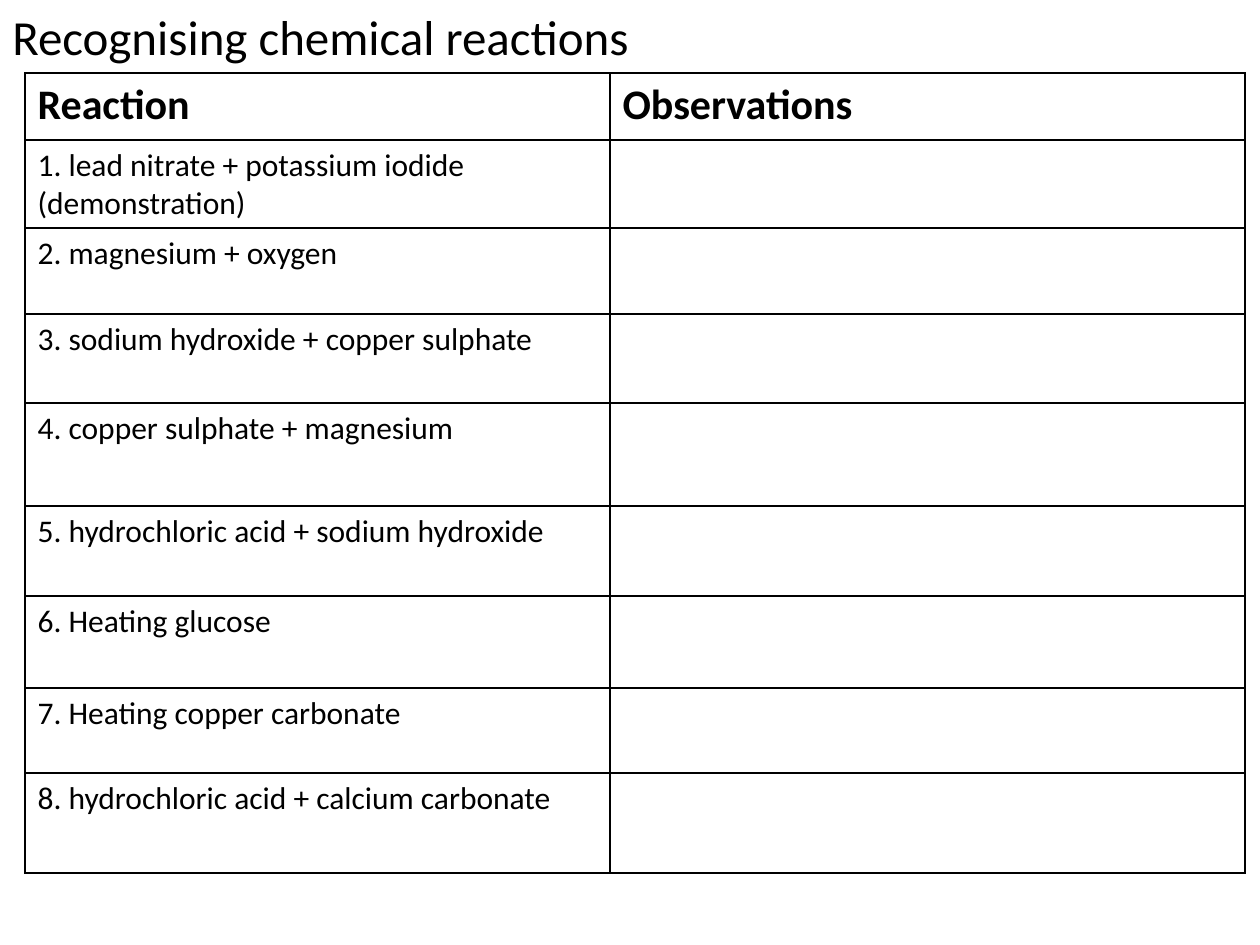
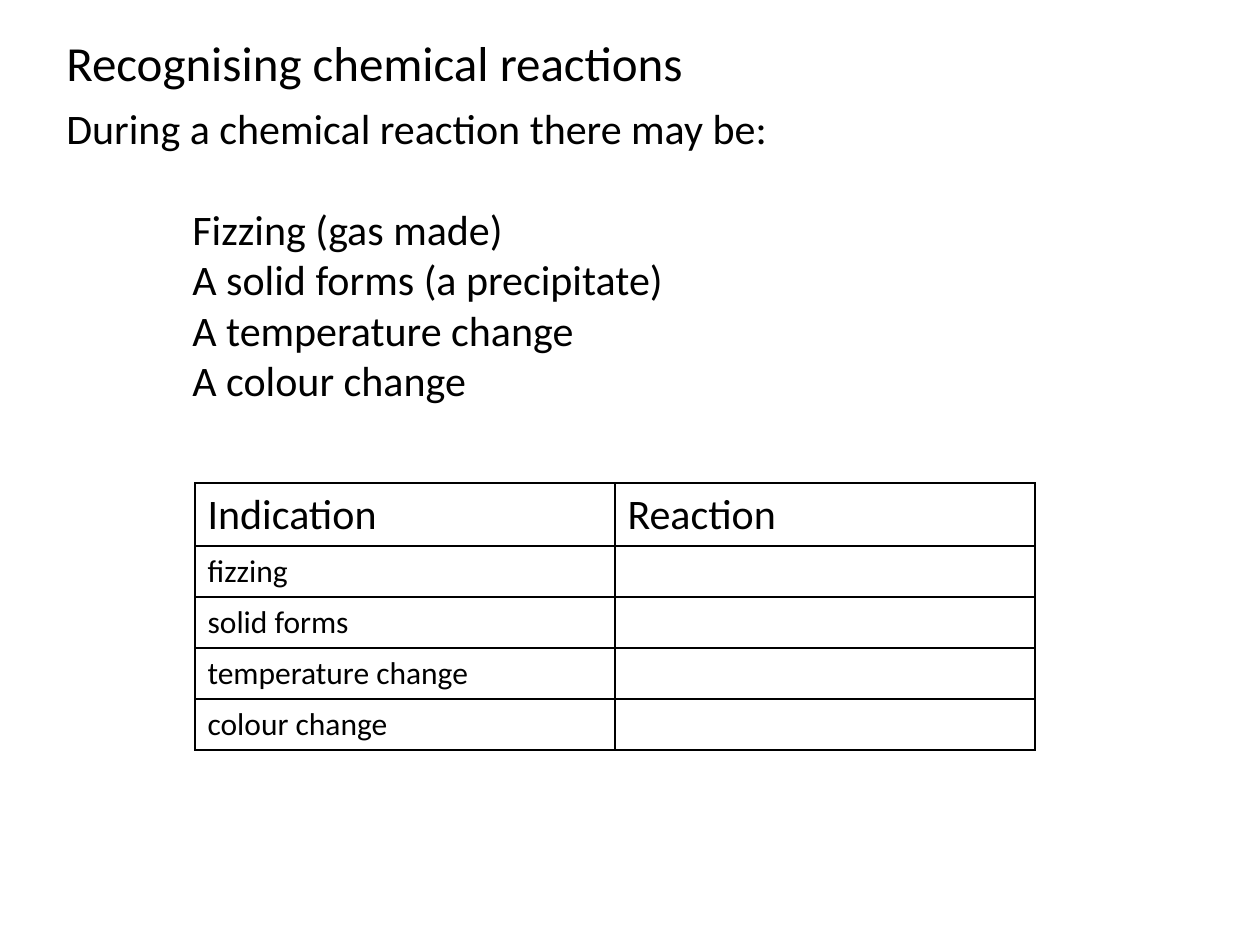
from dataclasses import dataclass

from lxml.etree import SubElement
from pptx import Presentation
from pptx.dml.color import RGBColor
from pptx.oxml.ns import qn
from pptx.util import Emu, Pt


@dataclass(frozen=True)
class Theme:
    font: str = "Calibri"
    ink: str = "000000"
    title: int = 28
    heading: int = 24
    body: int = 18
    border: int = 1


THEME = Theme()
PX = 914400 / 126
TITLE = "Recognising chemical reactions"


def write(frame, lines, size, bold=False):
    frame.word_wrap = True
    frame.text = "\n".join(lines)
    for paragraph in frame.paragraphs:
        font = paragraph.font
        font.name, font.size, font.bold = THEME.font, Pt(size), bold
        font.color.rgb = RGBColor.from_string(THEME.ink)


def add_worksheet(slide, left, top, widths, heights, headings, entries, bold):
    """Add a ruled table: headings on top, entries on the left, blanks to fill in."""
    box = [Emu(round(v * PX)) for v in (left, top, sum(widths), sum(heights))]
    table = slide.shapes.add_table(len(heights), len(widths), *box).table
    table.first_row = table.horz_banding = False
    for column, width in zip(table.columns, widths):
        column.width = Emu(round(width * PX))
    for row, height in zip(table.rows, heights):
        row.height = Emu(round(height * PX))

    for r, texts in enumerate([headings] + [(entry, "") for entry in entries]):
        for c, text in enumerate(texts):
            cell = table.cell(r, c)
            size = THEME.body if r else THEME.heading
            write(cell.text_frame, text.split("\n"), size, bold and r == 0)
            properties = cell._tc.get_or_add_tcPr()
            for side in ("a:lnL", "a:lnR", "a:lnT", "a:lnB"):
                line = SubElement(properties, qn(side), w=str(Pt(THEME.border)))
                fill = SubElement(line, qn("a:solidFill"))
                SubElement(fill, qn("a:srgbClr"), val=THEME.ink)
            cell.fill.background()


deck = Presentation()
deck.slide_width = Emu(round(1260 * PX))
deck.slide_height = Emu(round(945 * PX))

# Both slides carry the same title
slides = []
for title_box in ((0, 0, 1260, 72), (54, 26, 1091, 72)):
    slide = deck.slides.add_slide(deck.slide_layouts[6])
    title = slide.shapes.add_textbox(*(Emu(round(v * PX)) for v in title_box))
    write(title.text_frame, [TITLE], THEME.title)
    slides.append(slide)
observation_slide, indication_slide = slides

# Slide 1: observations of each reaction
reactions = [
    "1. lead nitrate + potassium iodide\n(demonstration)",
    "2. magnesium + oxygen",
    "3. sodium hydroxide + copper sulphate",
    "4. copper sulphate + magnesium",
    "5. hydrochloric acid + sodium hydroxide",
    "6. Heating glucose",
    "7. Heating copper carbonate",
    "8. hydrochloric acid + calcium carbonate",
]
add_worksheet(observation_slide, 25, 73, (585, 635),
              (67, 88, 86, 89, 103, 90, 92, 85, 100),
              ("Reaction", "Observations"), reactions, bold=True)

# Slide 2: signs of a reaction, then a table to match them
signs = [
    "Fizzing (gas made)",
    "A solid forms (a precipitate)",
    "A temperature change",
    "A colour change",
]
summary = indication_slide.shapes.add_textbox(
    *(Emu(round(v * PX)) for v in (54, 96, 1121, 318)))
write(summary.text_frame,
      ["During a chemical reaction there may be:"] + signs, THEME.heading)
sign_lines = summary.text_frame.paragraphs[1:]
for sign_line in sign_lines:
    sign_line._p.get_or_add_pPr().set("marL", str(round(126 * PX)))
sign_lines[0].space_before = Pt(29)

indications = ["fizzing", "solid forms", "temperature change", "colour change"]
add_worksheet(indication_slide, 195, 483, (420, 420),
              [63] + [51] * len(indications),
              ("Indication", "Reaction"), indications, bold=False)

deck.save("out.pptx")
